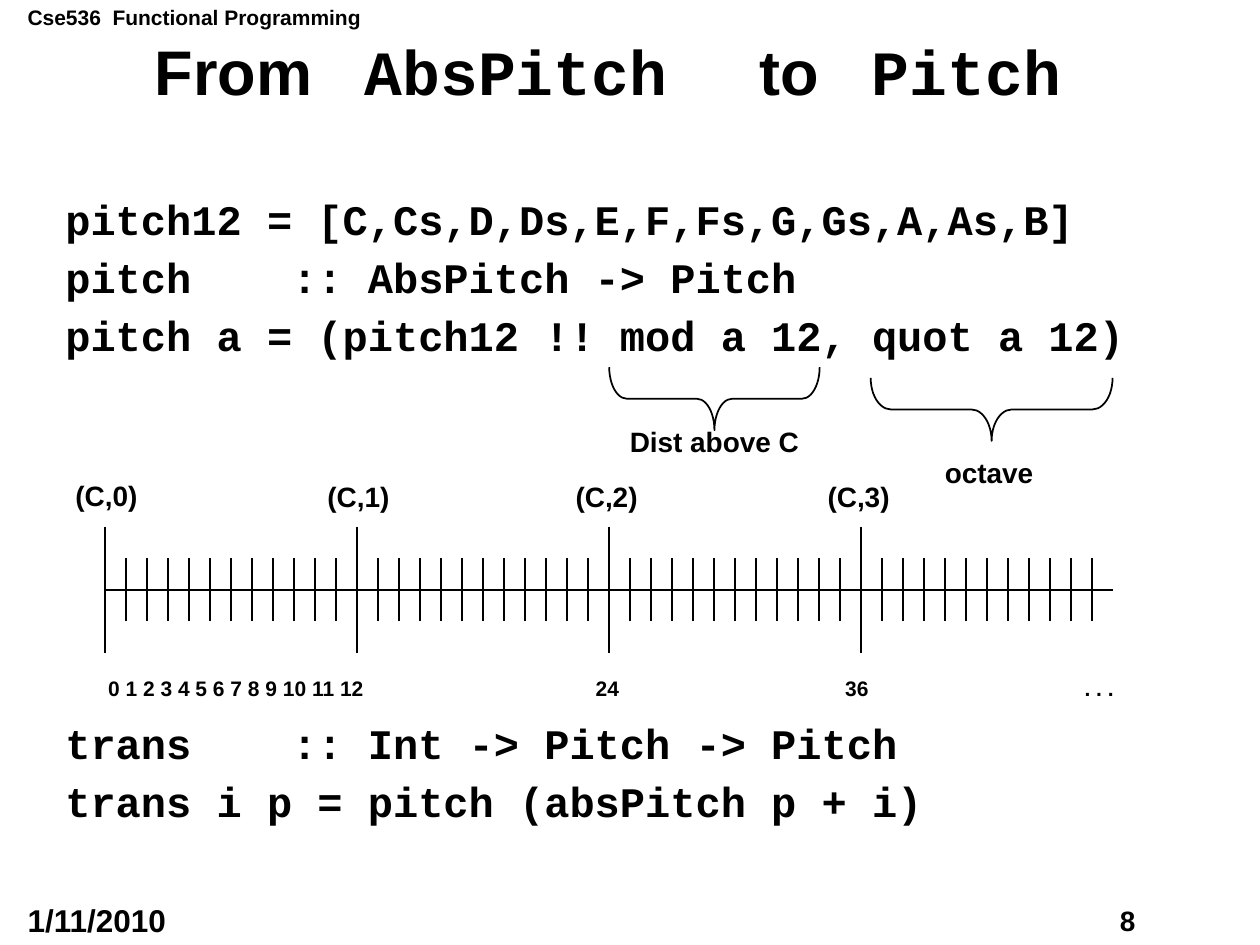
from lxml import etree
from pptx import Presentation
from pptx.dml.color import RGBColor
from pptx.enum.shapes import MSO_CONNECTOR, MSO_SHAPE
from pptx.enum.text import MSO_ANCHOR, MSO_AUTO_SIZE, PP_ALIGN
from pptx.oxml.ns import qn
from pptx.util import Inches, Pt

STRAIGHT = MSO_CONNECTOR.STRAIGHT
BRACE = MSO_SHAPE.RIGHT_BRACE
MIDDLE = MSO_ANCHOR.MIDDLE
GROW = MSO_AUTO_SIZE.SHAPE_TO_FIT_TEXT
CENTER = PP_ALIGN.CENTER

INK = "000000"
SANS = "Arial"
MONO = "Courier New"

LABELS = [
    ("Cse536  Functional Programming", 12, (0.12, -0.01, 2.85, 0.3)),
    ("8", 16, (8.79, 7.12, 0.47, 0.36)),
    ("1/11/2010", 18, (0.12, 7.1, 1.45, 0.4)),
    ("octave", 16, (7.4, 3.57, 0.9, 0.37)),
    ("Dist above C", 16, (4.9, 3.32, 1.55, 0.37)),
]
OCTAVES = [
    ("(C,0)", 0.5, 3.75),
    ("(C,1)", 2.5, 3.76),
    ("(C,2)", 4.47, 3.76),
    ("(C,3)", 6.47, 3.76),
]
# Text, font, extra points after each letter
TITLE = [
    ("From", SANS, 0), (" ", SANS, 20), ("AbsPitch", MONO, 0),
    (" ", SANS, 43), ("to", SANS, 0), (" ", SANS, 20), ("Pitch", MONO, 0),
]
# Text, points before the line
CODE = [
    ("pitch12 = [C,Cs,D,Ds,E,F,Fs,G,Gs,A,As,B]", 0),
    ("pitch    :: AbsPitch -> Pitch", 7.2),
    ("pitch a = (pitch12 !! mod a 12, quot a 12)", 7.2),
    ("trans    :: Int -> Pitch -> Pitch", 207.5),
    ("trans i p = pitch (absPitch p + i)", 7.2),
]
SCALE = "0 1 2 3 4 5 6 7 8 9 10 11 12\t24\t36\t. . ."
STOPS = (3.87, 5.85, 7.75)

SPAN, STEPS = 2, 12
LEFT, AXIS = 5 / 6, 4.68


def paint(color):
    return RGBColor.from_string(color)


def apply(item, style):
    for name, value in style.items():
        setattr(item, name, value)


def add_run(para, text, size, font=SANS):
    run = para.add_run()
    run.text = text
    apply(run.font, {"size": Pt(size), "name": font, "bold": True})
    run.font.color.rgb = paint(INK)
    return run


def add_box(slide, area, **style):
    frame = slide.shapes.add_textbox(*map(Inches, area)).text_frame
    apply(frame, {"word_wrap": True, **style})
    return frame


def add_label(slide, text, size, area):
    frame = add_box(slide, area, word_wrap=False, auto_size=GROW)
    add_run(frame.paragraphs[0], text, size)


def add_title(slide):
    frame = add_box(slide, (0.31, 0.32, 9.03, 0.56), vertical_anchor=MIDDLE)
    para = frame.paragraphs[0]
    apply(para, {"alignment": CENTER, "line_spacing": 0.9})
    for text, font, gap in TITLE:
        run = add_run(para, text, 36, font)
        if gap:
            run.font._element.set("spc", str(gap * 100))


def add_code(slide):
    frame = add_box(slide, (0.42, 1.53, 8.92, 5.63))
    for row, (text, gap) in enumerate(CODE):
        para = frame.add_paragraph() if row else frame.paragraphs[0]
        apply(para, {"line_spacing": 0.9, "space_before": Pt(gap)})
        add_run(para, text, 24, MONO)


def add_line(slide, *ends):
    line = slide.shapes.add_connector(STRAIGHT, *map(Inches, ends))
    line.line.color.rgb = paint(INK)
    line.line.width = Pt(1)
    etree.SubElement(line._element.spPr, qn("a:effectLst"))


def add_ruler(slide):
    """Draw the axis by octaves, with a tall tick at each C."""
    for octave, (text, left, top) in enumerate(OCTAVES):
        start = LEFT + octave * SPAN
        add_line(slide, start, AXIS, start + SPAN, AXIS)
        for step in range(STEPS):
            x = start + step * SPAN / STEPS
            half = 0.25 if step else 0.5
            add_line(slide, x, AXIS - half, x, AXIS + half)
        add_label(slide, text, 16, (left, top, 0.7, 0.37))


def add_scale(slide):
    """Number the ruler, with a tab stop for each later mark."""
    frame = add_box(slide, (0.76, 5.31, 8.57, 0.3), auto_size=GROW)
    para = frame.paragraphs[0]
    add_run(para, SCALE, 12)
    tabs = etree.SubElement(para._p.get_or_add_pPr(), qn("a:tabLst"))
    for stop in STOPS:
        etree.SubElement(tabs, qn("a:tab"), pos=str(Inches(stop)), algn="l")


def add_brace(slide, area, bend):
    brace = slide.shapes.add_shape(BRACE, *map(Inches, area))
    brace.rotation = 90
    brace.adjustments[0] = bend
    brace.shadow.inherit = False
    brace.fill.background()
    brace.line.color.rgb = paint(INK)
    brace.line.width = Pt(1)


def main():
    deck = Presentation()
    apply(deck, {"slide_width": Inches(10), "slide_height": Inches(7.5)})
    slide = deck.slides.add_slide(deck.slide_layouts[6])
    add_title(slide)
    add_code(slide)
    add_ruler(slide)
    add_scale(slide)
    add_brace(slide, (7.62, 2.29, 0.5, 1.92), 0.32)
    add_brace(slide, (5.42, 2.33, 0.5, 1.67), 0.28)
    for text, size, area in LABELS:
        add_label(slide, text, size, area)
    deck.save("out.pptx")


if __name__ == "__main__":
    main()
